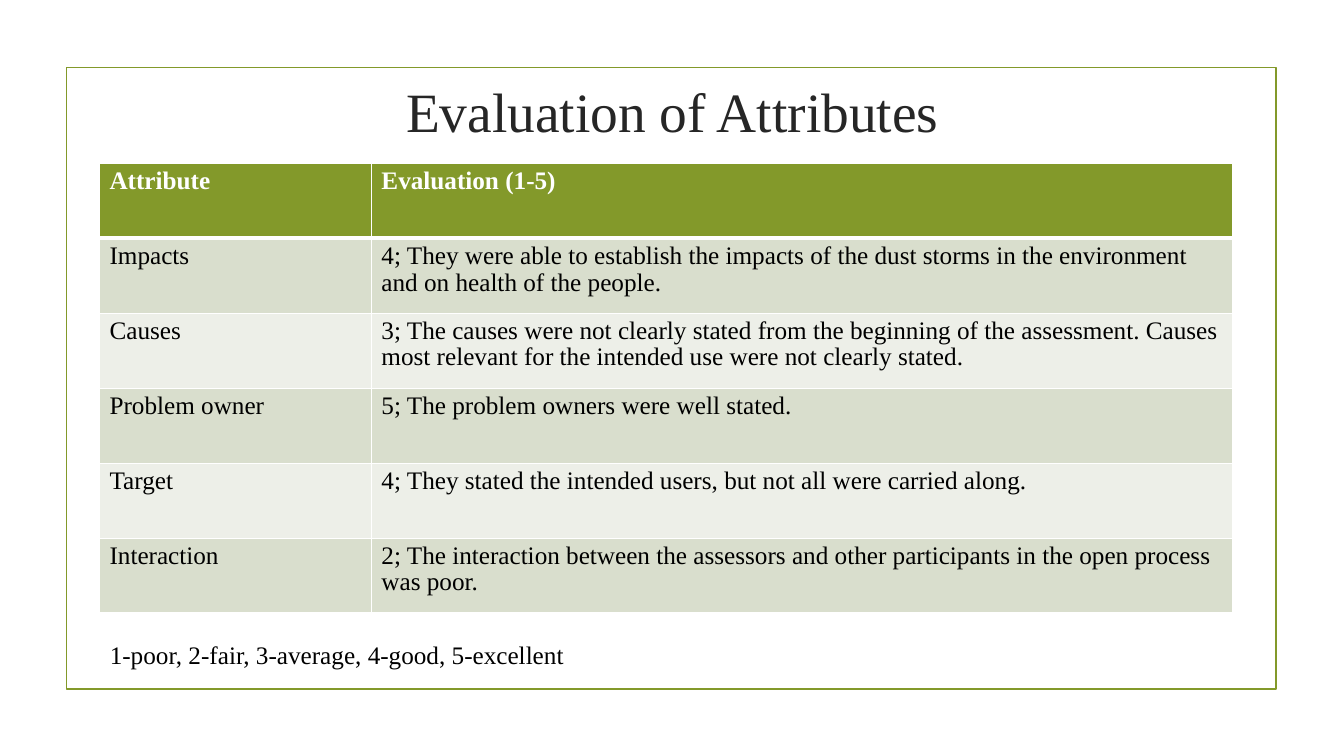
from lxml.etree import SubElement
from pptx import Presentation
from pptx.dml.color import RGBColor
from pptx.enum.shapes import MSO_SHAPE
from pptx.enum.text import MSO_ANCHOR, PP_ALIGN
from pptx.oxml.ns import qn
from pptx.util import Inches, Pt

COLORS = {"olive": "83992A", "title": "262626", "text": "000000",
          "white": "FFFFFF", "odd": "D9DECD", "even": "EDEFE8"}
FONT = "Times New Roman"

HEADER = ("Attribute", "Evaluation (1-5)")
RATINGS = [
    ("Impacts", "4; They were able to establish the impacts of the dust storms "
     "in the environment and on health of the people."),
    ("Causes", "3; The causes were not clearly stated from the beginning of the "
     "assessment. Causes most relevant for the intended use were not clearly stated."),
    ("Problem owner", "5; The problem owners were well stated."),
    ("Target", "4; They stated the intended users, but not all were carried along."),
    ("Interaction", "2; The interaction between the assessors and other "
     "participants in the open process was poor."),
]


def rgb(name):
    return RGBColor.from_string(COLORS[name])


class SlideBuilder:
    """Places elements on one slide; boxes are percentages of its size."""

    def __init__(self, prs):
        self.prs = prs
        self.s = prs.slides.add_slide(prs.slide_layouts[6])

    def box(self, left, top, width, height):
        w, h = self.prs.slide_width, self.prs.slide_height
        return [int(share * side / 100) for share, side in
                ((left, w), (top, h), (width, w), (height, h))]

    def fill_paragraph(self, p, text, size=18, color="text", bold=False, **fmt):
        """Add one styled run; fmt holds paragraph attributes."""
        for name, value in fmt.items():
            setattr(p, name, value)
        r = p.add_run()
        r.text = text
        font = {"name": FONT, "size": Pt(size), "bold": bold}
        for name, value in font.items():
            setattr(r.font, name, value)
        r.font.color.rgb = rgb(color)

    def frame(self, *area):
        sp = self.s.shapes.add_shape(MSO_SHAPE.RECTANGLE, *self.box(*area))
        sp.shadow.inherit = False
        sp.fill.background()
        sp.line.color.rgb = rgb("olive")
        sp.line.width = Pt(1.25)

    def text(self, area, text, anchor=MSO_ANCHOR.TOP, **fmt):
        tf = self.s.shapes.add_textbox(*self.box(*area)).text_frame
        tf.word_wrap = True
        tf.vertical_anchor = anchor
        self.fill_paragraph(tf.paragraphs[0], text, **fmt)

    def border(self, cell, **widths):
        """Draw white cell borders, given as side=points."""
        tcPr = cell._tc.get_or_add_tcPr()
        for side, width in widths.items():
            ln = SubElement(tcPr, qn(f"a:ln{side}"), w=str(Pt(width)))
            fill = SubElement(ln, qn("a:solidFill"))
            SubElement(fill, qn("a:srgbClr"), val=COLORS["white"])

    def table(self, area, rows, first_share):
        left, top, width, height = self.box(*area)
        tbl = self.s.shapes.add_table(
            len(rows), len(rows[0]), left, top, width, height).table
        tbl.columns[0].width = int(width * first_share)
        tbl.columns[1].width = width - tbl.columns[0].width
        for i, row in enumerate(rows):
            head = i == 0
            fill = "olive" if head else "odd" if i % 2 else "even"
            for j, text in enumerate(row):
                cell = tbl.cell(i, j)
                self.border(cell, L=1, R=1, T=3 if i == 1 else 1, B=3 if head else 1)
                cell.fill.solid()
                cell.fill.fore_color.rgb = rgb(fill)
                self.fill_paragraph(
                    cell.text_frame.paragraphs[0], text, bold=head,
                    color="white" if head else "text", line_spacing=0.95)


def main():
    prs = Presentation()
    prs.slide_width, prs.slide_height = Inches(13.33), Inches(7.5)
    slide = SlideBuilder(prs)
    slide.frame(4.95, 8.93, 90, 82.27)
    slide.text((10.65, 10, 78.77, 9.07), "Evaluation of Attributes",
               anchor=MSO_ANCHOR.MIDDLE, size=39.6, color="title",
               alignment=PP_ALIGN.CENTER)
    slide.table((7.4, 21.6, 84.3, 59.5), [HEADER, *RATINGS], 0.24)
    slide.text((7.43, 83.87, 72.17, 5.33),
               "1-poor, 2-fair, 3-average, 4-good, 5-excellent")
    prs.save("out.pptx")


if __name__ == "__main__":
    main()
